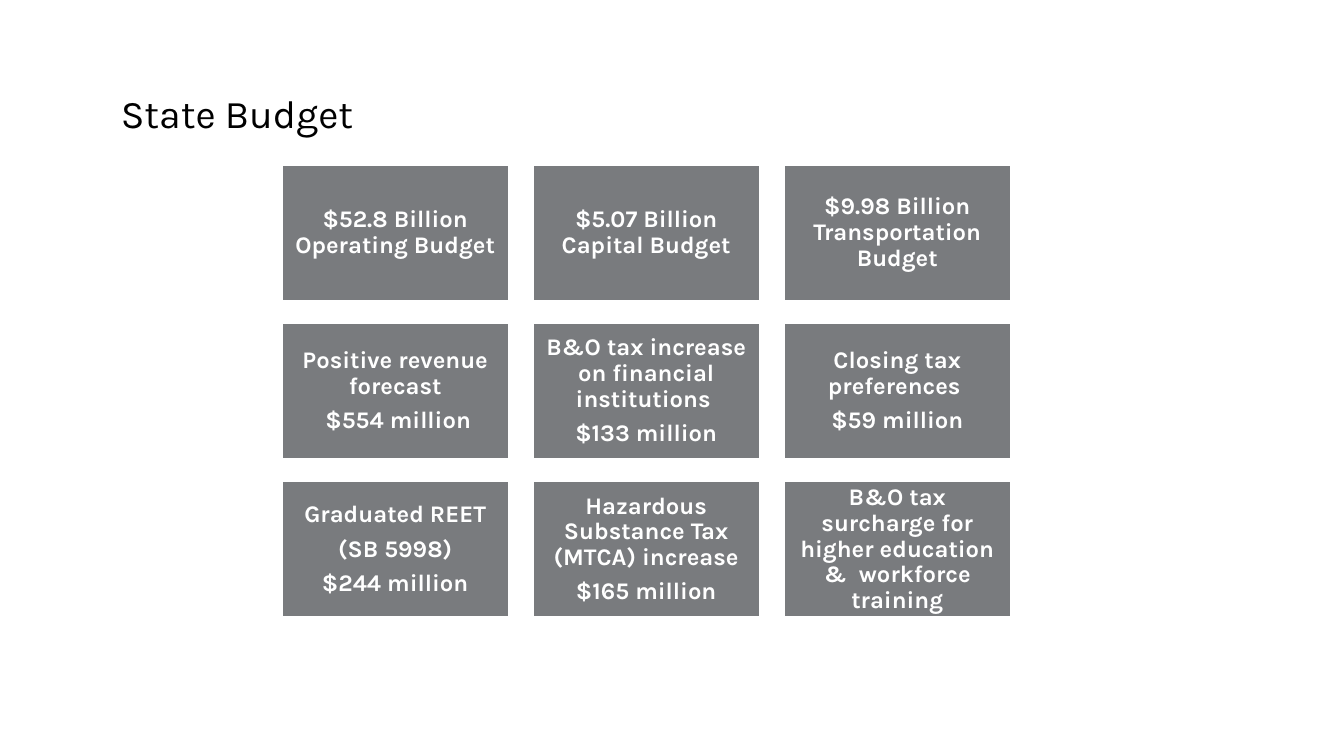
from pptx import Presentation
from pptx.dml.color import RGBColor
from pptx.enum.shapes import MSO_SHAPE
from pptx.enum.text import MSO_ANCHOR, PP_ALIGN
from pptx.util import Inches, Pt

RECTANGLE = MSO_SHAPE.RECTANGLE
MIDDLE = MSO_ANCHOR.MIDDLE
LEFT, CENTER = PP_ALIGN.LEFT, PP_ALIGN.CENTER

BLACK = RGBColor(0x00, 0x00, 0x00)
WHITE = RGBColor(0xFF, 0xFF, 0xFF)
GRAY = RGBColor(0x79, 0x7B, 0x7E)

TITLE_FONT = {"name": "Karla", "size": Pt(28), "bold": False}
CARD_FONT = {"name": "Karla", "size": Pt(17), "bold": True}

TITLE_BOX = (1.1, 0.82, 10.97, 0.6)
GRID_BOX = (2.79, 1.63, 7.24, 4.5)
GAP_X, GAP_Y = 0.23, 0.21
CARD_INSET = 0.07

BUDGET_ROWS = [
    [
        ["$52.8 Billion Operating Budget"],
        ["$5.07 Billion Capital Budget"],
        ["$9.98 Billion Transportation Budget"],
    ],
    [
        ["Positive revenue forecast", " $554 million"],
        ["B&O tax increase on financial institutions ", "$133 million"],
        ["Closing tax preferences ", "$59 million"],
    ],
    [
        ["Graduated REET", " (SB 5998) ", "$244 million"],
        ["Hazardous Substance Tax (MTCA) increase", "$165 million"],
        ["B&O tax surcharge for higher education &  workforce training"],
    ],
]


def write_lines(frame, lines, font, color, align, line_spacing=1.0):
    frame.word_wrap = True
    frame.vertical_anchor = MIDDLE
    for index, line in enumerate(lines):
        para = frame.add_paragraph() if index else frame.paragraphs[0]
        para.alignment = align
        para.line_spacing = line_spacing
        para.space_before = Pt(6 if index else 0)
        span = para.add_run()
        span.text = line
        for name, value in font.items():
            setattr(span.font, name, value)
        span.font.color.rgb = color


def add_title(page, box, text):
    title = page.shapes.add_textbox(*map(Inches, box))
    write_lines(title.text_frame, [text], TITLE_FONT, BLACK, LEFT)


def add_card(page, box, lines):
    card = page.shapes.add_shape(RECTANGLE, *map(Inches, box))
    card.shadow.inherit = False
    card.fill.solid()
    card.fill.fore_color.rgb = GRAY
    card.line.color.rgb = WHITE
    card.line.width = Pt(2)
    for side in ("left", "top", "right", "bottom"):
        setattr(card.text_frame, f"margin_{side}", Inches(CARD_INSET))
    write_lines(card.text_frame, lines, CARD_FONT, WHITE, CENTER, 0.9)


def add_card_grid(page, box, rows):
    left, top, width, height = box
    card_width = (width + GAP_X) / len(rows[0]) - GAP_X
    card_height = (height + GAP_Y) / len(rows) - GAP_Y
    for row, cards in enumerate(rows):
        for column, lines in enumerate(cards):
            x = left + column * (card_width + GAP_X)
            y = top + row * (card_height + GAP_Y)
            add_card(page, (x, y, card_width, card_height), lines)


def main():
    deck = Presentation()
    deck.slide_width, deck.slide_height = Inches(13.33), Inches(7.5)
    page = deck.slides.add_slide(deck.slide_layouts[6])
    add_title(page, TITLE_BOX, "State Budget")
    add_card_grid(page, GRID_BOX, BUDGET_ROWS)
    deck.save("out.pptx")


if __name__ == "__main__":
    main()
